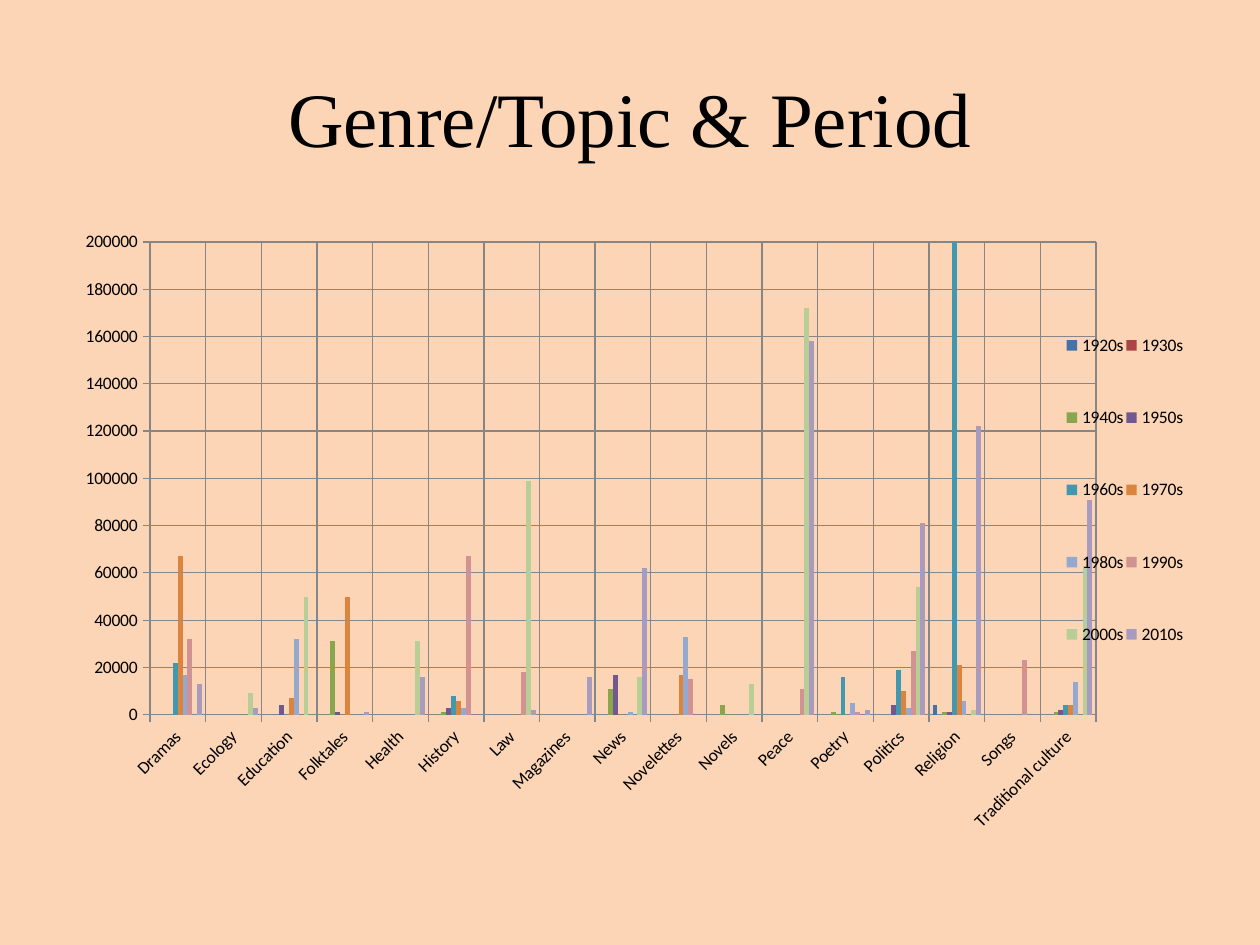
from lxml import etree
from pptx import Presentation, util as u
from pptx.chart.data import CategoryChartData
from pptx.dml.color import RGBColor
from pptx.enum import chart as ch, text
from pptx.oxml import parse_xml
from pptx.oxml.ns import nsdecls, qn

PX = 914400 / 126
BACKGROUND, INK, GRID = "FBD5B5", "000000", "868686"

TOPICS = ["Dramas", "Ecology", "Education", "Folktales", "Health", "History",
          "Law", "Magazines", "News", "Novelettes", "Novels", "Peace", "Poetry",
          "Politics", "Religion", "Songs", "Traditional culture"]

# Decade, colour, and thousands by topic; topics left out have no value.
DECADES = [
    ("1920s", "4572A7", {"Religion": 4}),
    ("1930s", "AA4643", {}),
    ("1940s", "89A54E", {"Folktales": 31, "History": 1, "News": 11, "Novelettes": 0,
                         "Novels": 4, "Poetry": 1, "Religion": 1,
                         "Traditional culture": 1}),
    ("1950s", "71588F", {"Education": 4, "Folktales": 1, "History": 3, "News": 17,
                         "Politics": 4, "Religion": 1, "Traditional culture": 2}),
    ("1960s", "4198AF", {"Dramas": 22, "History": 8, "Poetry": 16, "Politics": 19,
                         "Religion": 202, "Songs": 0, "Traditional culture": 4}),
    ("1970s", "DB843D", {"Dramas": 67, "Education": 7, "Folktales": 50, "History": 6,
                         "Novelettes": 17, "Politics": 10, "Religion": 21,
                         "Traditional culture": 4}),
    ("1980s", "93A9CF", {"Dramas": 17, "Education": 32, "History": 3, "News": 1,
                         "Novelettes": 33, "Poetry": 5, "Politics": 3, "Religion": 6,
                         "Traditional culture": 14}),
    ("1990s", "D19392", {"Dramas": 32, "History": 67, "Law": 18, "Novelettes": 15,
                         "Peace": 11, "Poetry": 1, "Politics": 27, "Songs": 23}),
    ("2000s", "B9CD96", {"Ecology": 9, "Education": 50, "Health": 31, "Law": 99,
                         "News": 16, "Novels": 13, "Peace": 172, "Politics": 54,
                         "Religion": 2, "Traditional culture": 63}),
    ("2010s", "A99BBD", {"Dramas": 13, "Ecology": 3, "Folktales": 1, "Health": 16,
                         "Law": 2, "Magazines": 16, "News": 62, "Peace": 158,
                         "Poetry": 2, "Politics": 81, "Religion": 122,
                         "Traditional culture": 91}),
]

# Left, top, width and height on the slide, in px.
TITLE = (63, 38, 1134, 157)
CHART = (63, 221, 1134, 623)
PLOT = (150, 242, 946, 473)
LEGEND = (1064, 283, 122, 414)


def px(*lengths):
    return [u.Emu(round(length * PX)) for length in lengths]


def color(value):
    return RGBColor.from_string(value)


def add_title(page, words):
    box = page.shapes.add_textbox(*px(*TITLE))
    frame = box.text_frame
    frame.word_wrap = True
    frame.vertical_anchor = text.MSO_ANCHOR.MIDDLE
    para = frame.paragraphs[0]
    para.alignment = text.PP_ALIGN.CENTER
    span = para.add_run()
    span.text = words
    span.font.name = "Times New Roman"
    span.font.size = u.Pt(44)
    span.font.color.rgb = color(INK)


def chart_data():
    data = CategoryChartData(number_format="General")
    data.categories = TOPICS
    for decade, _, thousands in DECADES:
        data.add_series(decade, [thousands[topic] * 1000 if topic in thousands else None
                                 for topic in TOPICS])
    return data


def style_axis(axis):
    axis.has_major_gridlines = True
    axis.major_tick_mark = ch.XL_TICK_MARK.CROSS
    axis.minor_tick_mark = ch.XL_TICK_MARK.NONE
    axis.tick_labels.font.size = u.Pt(10)
    for line in (axis.format.line, axis.major_gridlines.format.line):
        line.color.rgb = color(GRID)
        line.width = u.Pt(0.75)


def manual_layout(place, inner=False):
    """Turn a place on the slide into fractions of the chart's size."""
    left, top, width, height = place
    chart_left, chart_top, chart_width, chart_height = CHART
    layout = parse_xml(f"<c:layout {nsdecls('c')}><c:manualLayout/></c:layout>")
    settings = [("layoutTarget", "inner")] if inner else []
    settings += [("xMode", "edge"), ("yMode", "edge"),
                 ("x", (left - chart_left) / chart_width),
                 ("y", (top - chart_top) / chart_height),
                 ("w", width / chart_width), ("h", height / chart_height)]
    for name, value in settings:
        etree.SubElement(layout[0], qn(f"c:{name}")).set("val", str(value))
    return layout


def remove_layout(parent):
    for old in parent.findall(qn("c:layout")):
        parent.remove(old)


def add_column_chart(page):
    chart = page.shapes.add_chart(ch.XL_CHART_TYPE.COLUMN_CLUSTERED,
                                  *px(*CHART), chart_data()).chart
    chart.has_title = False
    chart.font.name = "Calibri"
    chart.font.size = u.Pt(10)
    chart.font.color.rgb = color(INK)

    plot = chart.plots[0]
    plot.vary_by_categories = False
    plot.gap_width = 150
    plot.overlap = 0
    for series, (_, fill, _) in zip(plot.series, DECADES):
        series.format.fill.solid()
        series.format.fill.fore_color.rgb = color(fill)
        series.invert_if_negative = False

    topics, counts = chart.category_axis, chart.value_axis
    style_axis(topics)
    style_axis(counts)
    counts.minimum_scale, counts.maximum_scale, counts.major_unit = 0, 200000, 20000
    topics._element.find(qn("c:txPr")).find(qn("a:bodyPr")).set("rot", "-2700000")

    chart.has_legend = True
    legend = chart.legend
    legend.position = ch.XL_LEGEND_POSITION.RIGHT
    legend.include_in_layout = False
    legend.font.size = u.Pt(10)
    remove_layout(legend._element)
    legend._element.find(qn("c:legendPos")).addnext(manual_layout(LEGEND))
    area = chart._chartSpace.chart.plotArea
    remove_layout(area)
    area.insert(0, manual_layout(PLOT, inner=True))


def main():
    deck = Presentation()
    deck.slide_width, deck.slide_height = px(1260, 945)
    page = deck.slides.add_slide(deck.slide_layouts[6])
    page.background.fill.solid()
    page.background.fill.fore_color.rgb = color(BACKGROUND)
    add_title(page, "Genre/Topic & Period")
    add_column_chart(page)
    deck.save("out.pptx")


if __name__ == "__main__":
    main()
